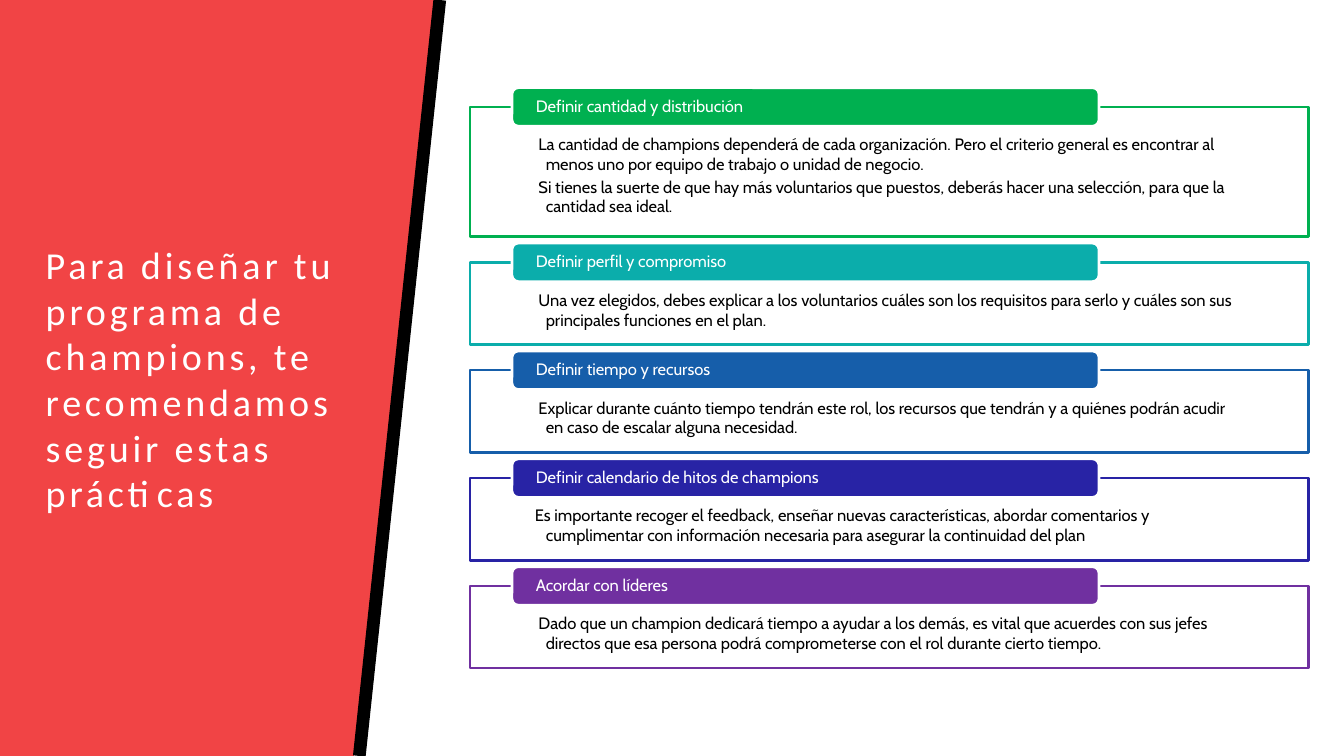
from lxml import etree
from pptx import Presentation
from pptx import util as u
from pptx.dml import color
from pptx.enum import shapes, text
from pptx.oxml import ns

COLORS = {
    "red": "F14445", "black": "000000", "white": "FFFFFF", "green": "00B050",
    "teal": "0BADAB", "blue": "165EAA", "indigo": "2823A5", "purple": "7030A0",
}
TITLE = "Para diseñar tu programa de champions, te recomendamos seguir estas prácticas"
INDENTED, FLUSH = -0.08, -0.12
PRACTICES = [
    ("Definir cantidad y distribución", "green", 1.42, INDENTED, [
        "La cantidad de champions dependerá de cada organización. Pero el criterio general es "
        "encontrar al menos uno por equipo de trabajo o unidad de negocio.",
        "Si tienes la suerte de que hay más voluntarios que puestos, deberás hacer una "
        "selección, para que la cantidad sea ideal."]),
    ("Definir perfil y compromiso", "teal", 0.9, INDENTED, [
        "Una vez elegidos, debes explicar a los voluntarios cuáles son los requisitos para "
        "serlo y cuáles son sus principales funciones en el plan."]),
    ("Definir tiempo y recursos", "blue", 0.9, INDENTED, [
        "Explicar durante cuánto tiempo tendrán este rol, los recursos que tendrán y a quiénes "
        "podrán acudir en caso de escalar alguna necesidad."]),
    ("Definir calendario de hitos de champions", "indigo", 0.9, FLUSH, [
        "Es importante recoger el feedback, enseñar nuevas características, abordar comentarios "
        "y cumplimentar con información necesaria para asegurar la continuidad del plan"]),
    ("Acordar con líderes", "purple", 0.9, INDENTED, [
        "Dado que un champion dedicará tiempo a ayudar a los demás, es vital que acuerdes con "
        "sus jefes directos que esa persona podrá comprometerse con el rol durante cierto tiempo."]),
]


def rgb(name):
    """Return the named colour."""
    return color.RGBColor.from_string(COLORS[name])


def set_all(target, values):
    """Set every attribute in values on target."""
    for name, value in values.items():
        setattr(target, name, value)


def paint(shape, fill, line=None):
    """Give a shape a flat fill and an optional 2 pt outline."""
    shape.shadow.inherit = False
    shape.fill.solid()
    shape.fill.fore_color.rgb = rgb(fill)
    if line:
        shape.line.color.rgb = rgb(line)
        shape.line.width = u.Pt(2)
    else:
        shape.line.fill.background()


def write(shape, lines, font, ink, anchor, insets, spacing):
    """Write left-aligned paragraphs into a shape and return them."""
    frame = shape.text_frame
    left, top, right, bottom = map(u.Inches, insets)
    set_all(frame, {"word_wrap": True, "vertical_anchor": anchor, "margin_left": left,
                    "margin_top": top, "margin_right": right, "margin_bottom": bottom})
    for number, line in enumerate(lines):
        para = frame.add_paragraph() if number else frame.paragraphs[0]
        set_all(para, {"alignment": text.PP_ALIGN.LEFT, **spacing})
        span = para.add_run()
        span.text = line
        set_all(span.font, font)
        span.font.color.rgb = rgb(ink)
    return frame.paragraphs


def add_title_panel(page, left, top, width, height):
    """Draw the slanted red panel with its black edge and title."""
    slant, offset = 0.88, 0.06
    outline = page.shapes.build_freeform(u.Inches(left), u.Inches(top))
    corners = [(left + width, top), (left + width - slant, top + height), (left, top + height)]
    outline.add_line_segments([(u.Inches(x), u.Inches(y)) for x, y in corners])
    paint(outline.convert_to_shape(), "red")

    edge = page.shapes.add_connector(
        shapes.MSO_CONNECTOR.STRAIGHT, u.Inches(left + width + offset), u.Inches(top),
        u.Inches(left + width + offset - slant), u.Inches(top + height))
    edge.line.color.rgb = rgb("black")
    edge.line.width = u.Pt(10)
    etree.SubElement(edge._element.spPr, ns.qn("a:effectLst"))

    box = page.shapes.add_textbox(u.Inches(left + 0.39), u.Inches(top + 0.24),
                                  u.Inches(3.45), u.Inches(7.8))
    paras = write(box, [TITLE], {"name": "Calibri", "size": u.Pt(30)}, "white",
                  text.MSO_ANCHOR.MIDDLE, (0.11, 0.05, 0.11, 0.05), {})
    paras[0].runs[0].font._element.set("spc", "300")


def add_practice(page, left, top, width, height, heading, hue, indent, lines):
    """Draw one outlined practice with its heading tab."""
    body = page.shapes.add_shape(shapes.MSO_SHAPE.RECTANGLE, u.Inches(left), u.Inches(top),
                                 u.Inches(width), u.Inches(height))
    paint(body, "white", hue)
    paras = write(body, lines, {"name": "Cabin", "size": u.Pt(13)}, "black",
                  text.MSO_ANCHOR.TOP, (0.71, 0.3, 0.71, 0.1), {"space_after": u.Pt(2)})
    for para in paras:
        properties = para._p.get_or_add_pPr()
        properties.set("marL", str(u.Inches(0.12)))
        properties.set("indent", str(u.Inches(indent)))

    tab = page.shapes.add_shape(shapes.MSO_SHAPE.ROUNDED_RECTANGLE, u.Inches(left + 0.46),
                                u.Inches(top - 0.21), u.Inches(6.42), u.Inches(0.42))
    paint(tab, hue, "white")
    write(tab, [heading], {"name": "Cabin", "size": u.Pt(13)}, "white",
          text.MSO_ANCHOR.MIDDLE, (0.24, 0, 0.24, 0), {"line_spacing": 0.9})


def add_practices(page, left, top, width, gap):
    """Stack the practices downwards with equal gaps."""
    for heading, hue, height, indent, lines in PRACTICES:
        add_practice(page, left, top, width, height, heading, hue, indent, lines)
        top += height + gap


def main():
    """Build and save the deck."""
    deck = Presentation()
    set_all(deck, {"slide_width": u.Inches(14.7), "slide_height": u.Inches(8.27)})
    page = deck.slides.add_slide(deck.slide_layouts[6])
    add_title_panel(page, 0, 0, 4.75, 8.27)
    add_practices(page, 5.14, 1.17, 9.17, 0.28)
    deck.save("out.pptx")


if __name__ == "__main__":
    main()
